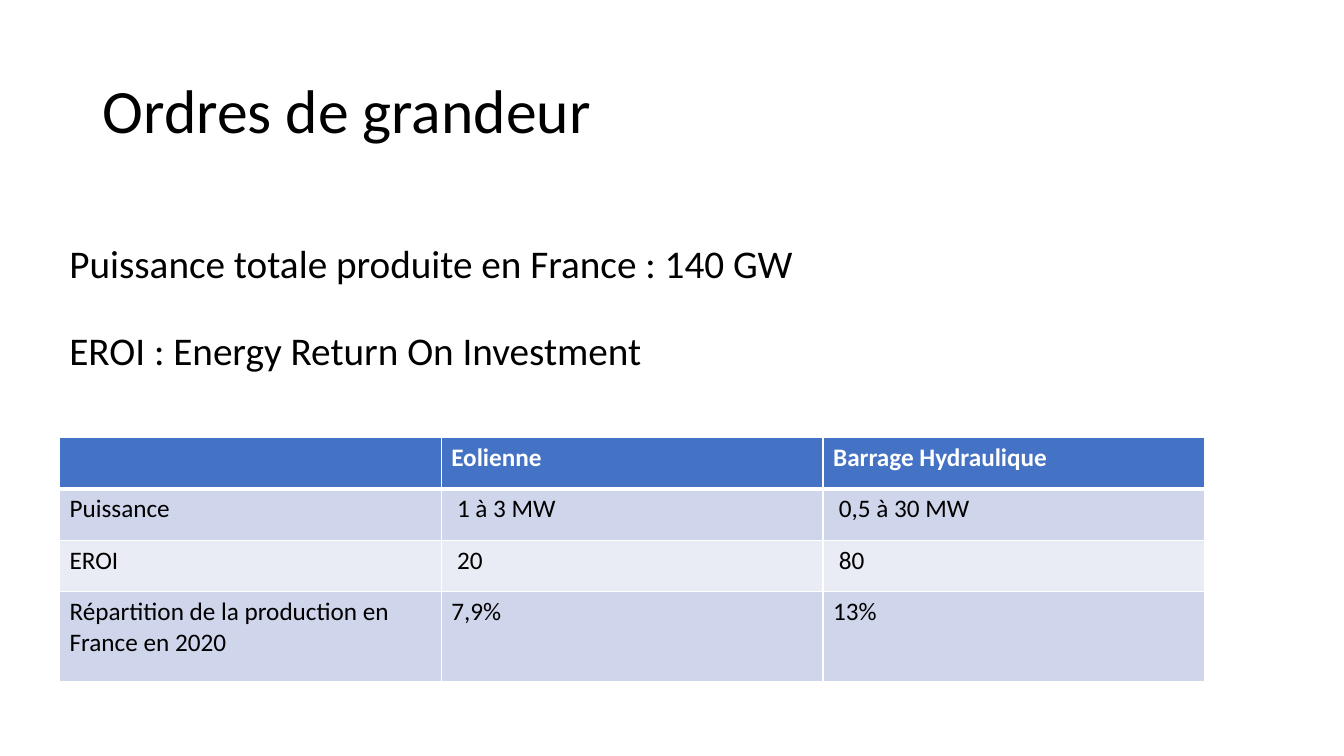
import pptx
import pptx.util
import pptx.dml.color
import pptx.enum.text
import pptx.oxml
import pptx.oxml.ns

WIDTH, HEIGHT = 13.33, 7.5
FONT = "Calibri"
COLOURS = {
    "text": "000000",
    "header": "4472C4",
    "odd_row": "CFD5EA",
    "even_row": "E9EBF5",
    "white": "FFFFFF",
}
LEFT = 0.59
TITLE_BOX = (0.92, 0.4, 11.5, 1.45)
STATEMENTS_BOX = (LEFT, 2.33, 8.34, 0.57)
STATEMENT_STEP = 0.86
TABLE_BOX = (LEFT, 4.34, 11.36, 2.43)
ROW_HEIGHTS = (0.51, 0.51, 0.51, 0.89)

STATEMENTS = [
    "Puissance totale produite en France : 140 GW",
    "EROI : Energy Return On Investment",
]
COMPARISON = [
    ["", "Eolienne", "Barrage Hydraulique"],
    ["Puissance", " 1 à 3 MW", " 0,5 à 30 MW"],
    ["EROI", " 20", " 80"],
    ["Répartition de la production en France en 2020", "7,9%", "13%"],
]


def colour(name):
    return pptx.dml.color.RGBColor.from_string(COLOURS[name])


def write(frame, wording, size, ink="text", bold=False):
    """Put one formatted run into a text frame."""
    paragraph = frame.paragraphs[0]
    run = paragraph.add_run()
    run.text = wording
    formats = {"name": FONT, "size": pptx.util.Pt(size), "bold": bold}
    for attribute, value in formats.items():
        setattr(run.font, attribute, value)
    run.font.color.rgb = colour(ink)
    return paragraph


def add_text(slide, box, wording, size, anchor):
    frame = slide.shapes.add_textbox(*map(pptx.util.Inches, box)).text_frame
    for attribute, value in {"word_wrap": True, "vertical_anchor": anchor}.items():
        setattr(frame, attribute, value)
    return write(frame, wording, size)


def add_title(slide, box):
    title = add_text(slide, box, "Ordres de grandeur", 44,
                     pptx.enum.text.MSO_ANCHOR.MIDDLE)
    title.line_spacing = 0.9


def add_statements(slide, box):
    left, top, width, height = box
    for index, statement in enumerate(STATEMENTS):
        add_text(slide, (left, top + index * STATEMENT_STEP, width, height),
                 statement, 28, pptx.enum.text.MSO_ANCHOR.TOP)


def set_borders(cell, widths):
    """Draw white borders, given in points for each side."""
    properties = cell._tc.get_or_add_tcPr()
    for position, (side, width) in enumerate(widths.items()):
        properties.insert(position, pptx.oxml.parse_xml(
            f'<a:ln{side} {pptx.oxml.ns.nsdecls("a")} w="{pptx.util.Pt(width)}">'
            f'<a:solidFill><a:srgbClr val="{COLOURS["white"]}"/></a:solidFill>'
            f'</a:ln{side}>'))


def add_comparison(slide, box):
    table = slide.shapes.add_table(len(COMPARISON), len(COMPARISON[0]),
                                   *map(pptx.util.Inches, box)).table
    for row, height in zip(table.rows, ROW_HEIGHTS):
        row.height = pptx.util.Inches(height)
    for row_index, values in enumerate(COMPARISON):
        header = row_index == 0
        fill = "header" if header else ("even_row", "odd_row")[row_index % 2]
        # The rule between header and body is thicker
        borders = {"L": 1, "R": 1, "T": 3 if row_index == 1 else 1,
                   "B": 3 if header else 1}
        for column_index, value in enumerate(values):
            cell = table.cell(row_index, column_index)
            cell.fill.solid()
            cell.fill.fore_color.rgb = colour(fill)
            set_borders(cell, borders)
            if value:
                write(cell.text_frame, value, 18,
                      "white" if header else "text", header)


def main():
    deck = pptx.Presentation()
    deck.slide_width = pptx.util.Inches(WIDTH)
    deck.slide_height = pptx.util.Inches(HEIGHT)
    slide = deck.slides.add_slide(deck.slide_layouts[6])
    add_title(slide, TITLE_BOX)
    add_comparison(slide, TABLE_BOX)
    add_statements(slide, STATEMENTS_BOX)
    deck.save("out.pptx")


if __name__ == "__main__":
    main()
